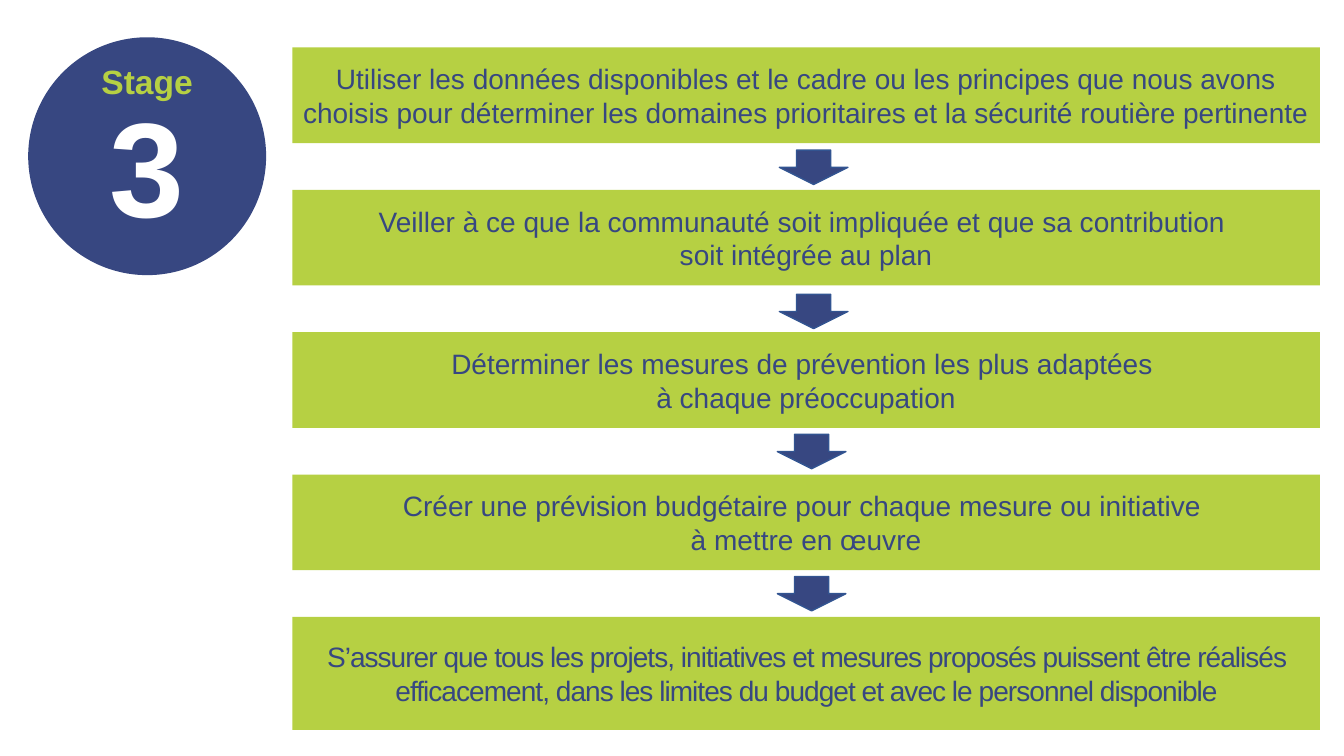
from dataclasses import dataclass

from pptx import Presentation
from pptx.dml.color import RGBColor
from pptx.enum.shapes import MSO_SHAPE
from pptx.enum.text import MSO_ANCHOR, PP_ALIGN
from pptx.util import Inches, Pt


@dataclass(frozen=True)
class Theme:
    font: str = "Arial"
    navy: RGBColor = RGBColor(0x37, 0x47, 0x81)
    lime: RGBColor = RGBColor(0xB6, 0xD0, 0x43)
    white: RGBColor = RGBColor(0xFF, 0xFF, 0xFF)
    edge: RGBColor = RGBColor(0x32, 0x54, 0x91)
    label: int = 24
    number: int = 96
    step: int = 20


THEME = Theme()

# Each step: its lines, then letter spacing in hundredths of a point
STEPS = [
    (["Utiliser les données disponibles et le cadre ou les principes que nous avons "
      "choisis pour déterminer les domaines prioritaires et la sécurité routière pertinente"], 0),
    (["Veiller à ce que la communauté soit impliquée et que sa contribution ",
      "soit intégrée au plan"], 0),
    (["Déterminer les mesures de prévention les plus adaptées ",
      "à chaque préoccupation"], 0),
    (["Créer une prévision budgétaire pour chaque mesure ou initiative ",
      "à mettre en œuvre"], 0),
    (["S’assurer que tous les projets, initiatives et mesures proposés puissent être réalisés "
      "efficacement, dans les limites du budget et avec le personnel disponible"], -70),
]
PITCH = 1.4125
BAR = 0.95
LAST = 1.12
ARROWS = [(4.83, 1.02), (4.83, 2.45), (4.81, 3.84), (4.81, 5.25)]


def add_form(slide, kind, box, fill):
    form = slide.shapes.add_shape(kind, *(Inches(size) for size in box))
    form.shadow.inherit = False
    form.fill.solid()
    form.fill.fore_color.rgb = fill
    form.line.fill.background()
    return form


def add_lines(form, lines, space=None, track=0):
    """Write (text, size, colour, bold) lines, centred, into the form."""
    frame = form.text_frame
    frame.word_wrap = True
    frame.vertical_anchor = MSO_ANCHOR.MIDDLE
    for i, (text, size, color, bold) in enumerate(lines):
        para = frame.add_paragraph() if i else frame.paragraphs[0]
        para.alignment = PP_ALIGN.CENTER
        para.line_spacing = space
        run = para.add_run()
        run.text = text
        font = para.font
        font.name, font.size, font.bold = THEME.font, Pt(size), bold
        font.color.rgb = color
        if track:
            run._r.get_or_add_rPr().set("spc", str(track))


def add_badge(slide, box):
    disc = add_form(slide, MSO_SHAPE.OVAL, box, THEME.navy)
    add_lines(disc, [("Stage", THEME.label, THEME.lime, True),
                     ("3", THEME.number, THEME.white, True)], space=0.9)


def add_steps(slide, left, top, width):
    for i, (lines, track) in enumerate(STEPS):
        height = LAST if i == len(STEPS) - 1 else BAR
        bar = add_form(slide, MSO_SHAPE.RECTANGLE,
                       (left, top + i * PITCH, width, height), THEME.lime)
        add_lines(bar, [(text, THEME.step, THEME.navy, False) for text in lines],
                  track=track)
    for x, y in ARROWS:
        arrow = add_form(slide, MSO_SHAPE.DOWN_ARROW,
                         (left + x, top + y, 0.68, 0.34), THEME.navy)
        arrow.line.color.rgb = THEME.edge
        arrow.line.width = Pt(1)


def main():
    deck = Presentation()
    deck.slide_width, deck.slide_height = Inches(13.33), Inches(7.5)
    slide = deck.slides.add_slide(deck.slide_layouts[6])
    add_badge(slide, (0.28, 0.37, 2.36, 2.36))
    add_steps(slide, 2.9, 0.47, 10.19)
    deck.save("out.pptx")


if __name__ == "__main__":
    main()
